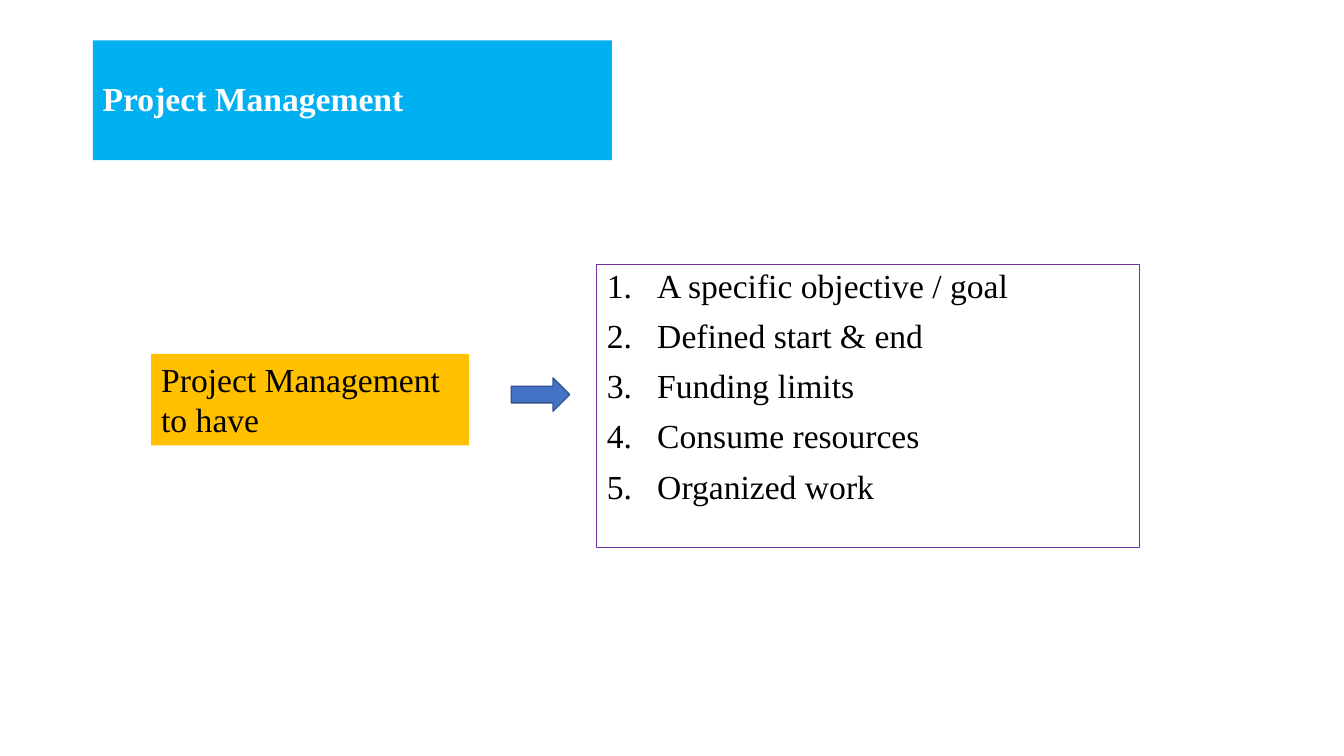
from dataclasses import dataclass, field
from typing import Any

from lxml import etree
from pptx import Presentation
from pptx import util as u
from pptx.dml.color import RGBColor
from pptx.enum import shapes, text
from pptx.oxml import ns


@dataclass(frozen=True)
class Theme:
    font: str = "Times New Roman"
    size: int = 24
    white: str = "FFFFFF"
    black: str = "000000"
    sky: str = "00B0F0"
    gold: str = "FFC000"
    plum: str = "7030A0"
    blue: str = "4472C4"
    navy: str = "325491"


@dataclass(frozen=True)
class Box:
    at: tuple[float, float, float, float]
    lines: tuple[str, ...] = ()
    kind: Any = shapes.MSO_SHAPE.RECTANGLE
    fill: str | None = None
    edge: str | None = None
    width: float = 1
    anchor: Any = text.MSO_ANCHOR.TOP
    listed: bool = False
    type: dict[str, Any] = field(default_factory=dict)
    para: dict[str, Any] = field(default_factory=dict)


THEME = Theme()
BOXES = (
    Box((0.92, 0.4, 5.15, 1.19), ("Project Management",), fill=THEME.sky,
        anchor=text.MSO_ANCHOR.MIDDLE,
        type={"bold": True, "color": THEME.white}, para={"line_spacing": 0.9}),
    Box((5.92, 2.62, 5.38, 2.81),
        ("A specific objective / goal", "Defined start & end", "Funding limits",
         "Consume resources", "Organized work"),
        edge=THEME.plum, width=0.75, listed=True,
        para={"line_spacing": 0.9, "space_before": u.Pt(10)}),
    Box((1.5, 3.51, 3.15, 0.91), ("Project Management to have",), fill=THEME.gold),
    Box((5.07, 3.75, 0.58, 0.33), kind=shapes.MSO_SHAPE.RIGHT_ARROW,
        fill=THEME.blue, edge=THEME.navy),
)


def put(obj: Any, vals: dict[str, Any]) -> None:
    """Set each named attribute of obj."""
    for key, val in vals.items():
        setattr(obj, key, val)


def number(para: Any) -> None:
    """Give a paragraph a hanging automatic number."""
    props = para._p.get_or_add_pPr()
    props.set("marL", str(u.Inches(0.5)))
    props.set("indent", str(u.Inches(-0.5)))
    mark = etree.SubElement(props, ns.qn("a:buFont"))
    mark.set("typeface", "+mj-lt")
    mark = etree.SubElement(props, ns.qn("a:buAutoNum"))
    mark.set("type", "arabicPeriod")


def write(frame: Any, box: Box) -> None:
    put(frame, {"word_wrap": True, "vertical_anchor": box.anchor})
    style = {"name": THEME.font, "size": u.Pt(THEME.size), **box.type}
    tint = style.pop("color", THEME.black)
    for i, line in enumerate(box.lines):
        para = frame.add_paragraph() if i else frame.paragraphs[0]
        put(para, {"alignment": text.PP_ALIGN.LEFT, **box.para})
        if box.listed:
            number(para)
        run = para.add_run()
        run.text = line
        put(run.font, style)
        run.font.color.rgb = RGBColor.from_string(tint)


def draw(slide: Any, box: Box) -> None:
    shape = slide.shapes.add_shape(box.kind, *map(u.Inches, box.at))
    shape.shadow.inherit = False
    for paint, tint in ((shape.fill, box.fill), (shape.line.fill, box.edge)):
        if tint:
            paint.solid()
            paint.fore_color.rgb = RGBColor.from_string(tint)
        else:
            paint.background()
    if box.edge:
        shape.line.width = u.Pt(box.width)
    if box.lines:
        write(shape.text_frame, box)


def main() -> None:
    deck = Presentation()
    put(deck, {"slide_width": u.Inches(13.33), "slide_height": u.Inches(7.5)})
    slide = deck.slides.add_slide(deck.slide_layouts[6])
    for box in BOXES:
        draw(slide, box)
    deck.save("out.pptx")


if __name__ == "__main__":
    main()
